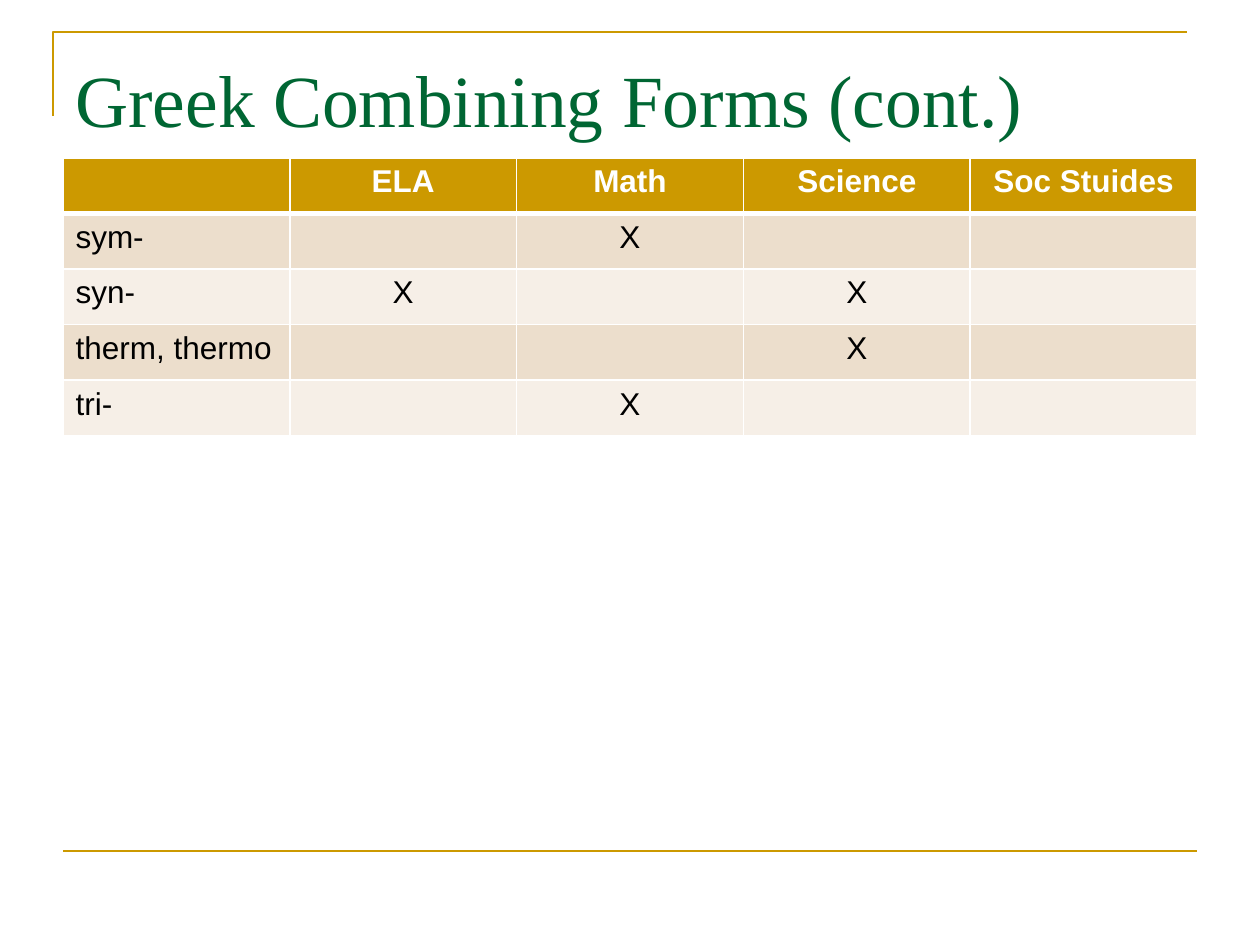
from pptx import Presentation
from pptx import util as u
from pptx.dml.color import RGBColor
from pptx.enum import shapes, text
from pptx.oxml.ns import qn
from lxml import etree

SCALE = 914400 / 126  # EMU per px
GOLD, GREEN, WHITE, BLACK = "CC9900", "006633", "FFFFFF", "000000"
BANDS = ("ECDECC", "F6EFE7")

SUBJECTS = ["", "ELA", "Math", "Science", "Soc Stuides"]
FORMS = {
    "sym-": ["Math"],
    "syn-": ["ELA", "Science"],
    "therm, thermo": ["Science"],
    "tri-": ["Math"],
}


def px(length):
    return u.Emu(round(length * SCALE))


def color(value):
    return RGBColor.from_string(value)


def write(frame, content, *, size, font, fill, bold=False, align=text.PP_ALIGN.LEFT):
    paragraph = frame.paragraphs[0]
    paragraph.alignment = align
    run = paragraph.add_run()
    run.text = content
    run.font.size = u.Pt(size)
    run.font.name = font
    run.font.bold = bold
    run.font.color.rgb = color(fill)


def style_line(shape):
    shape.line.color.rgb = color(GOLD)
    shape.line.width = u.Pt(1.5)


def add_corner(slide, left, top, right, bottom):
    builder = slide.shapes.build_freeform(left, bottom, scale=SCALE)
    builder.add_line_segments([(left, top), (right, top)], close=False)
    shape = builder.convert_to_shape()
    shape.shadow.inherit = False
    shape.fill.background()
    style_line(shape)


def add_rule(slide, left, right, y):
    connector = slide.shapes.add_connector(
        shapes.MSO_CONNECTOR.STRAIGHT, px(left), px(y), px(right), px(y))
    style_line(connector)
    etree.SubElement(connector._element.spPr, qn("a:effectLst"))


def add_title(slide, content):
    box = slide.shapes.add_textbox(px(63), px(38), px(1134), px(157))
    frame = box.text_frame
    frame.word_wrap = True
    frame.margin_top = px(16)
    write(frame, content, size=42, font="Times New Roman", fill=GREEN)


def set_borders(cell, bottom_width):
    properties = cell._tc.get_or_add_tcPr()
    widths = {"a:lnL": 1, "a:lnR": 1, "a:lnT": 1, "a:lnB": bottom_width}
    for index, (tag, width) in enumerate(widths.items()):
        line = etree.Element(qn(tag), w=str(u.Pt(width)))
        fill = etree.SubElement(line, qn("a:solidFill"))
        etree.SubElement(fill, qn("a:srgbClr"), val=WHITE)
        properties.insert(index, line)


def add_grid(slide):
    rows = [SUBJECTS]
    for form, subjects in FORMS.items():
        rows.append([form] + ["X" if name in subjects else "" for name in SUBJECTS[1:]])
    table = slide.shapes.add_table(
        len(rows), len(SUBJECTS), px(63), px(158), px(1134), px(278)).table
    table.horz_banding = False
    for row, values in enumerate(rows):
        header = row == 0
        for column, value in enumerate(values):
            cell = table.cell(row, column)
            cell.fill.solid()
            cell.fill.fore_color.rgb = color(GOLD if header else BANDS[(row - 1) % 2])
            set_borders(cell, bottom_width=3 if header else 1)
            if value:
                write(cell.text_frame, value, size=18, font="Arial", bold=header,
                      fill=WHITE if header else BLACK,
                      align=text.PP_ALIGN.CENTER if column else text.PP_ALIGN.LEFT)


def main():
    presentation = Presentation()
    presentation.slide_width, presentation.slide_height = px(1260), px(945)
    slide = presentation.slides.add_slide(presentation.slide_layouts[6])

    # Frame lines
    add_corner(slide, left=53, top=32, right=1187, bottom=116)
    add_rule(slide, left=63, right=1197, y=851)

    # Title and table
    add_title(slide, "Greek Combining Forms (cont.)")
    add_grid(slide)

    presentation.save("out.pptx")


if __name__ == "__main__":
    main()
